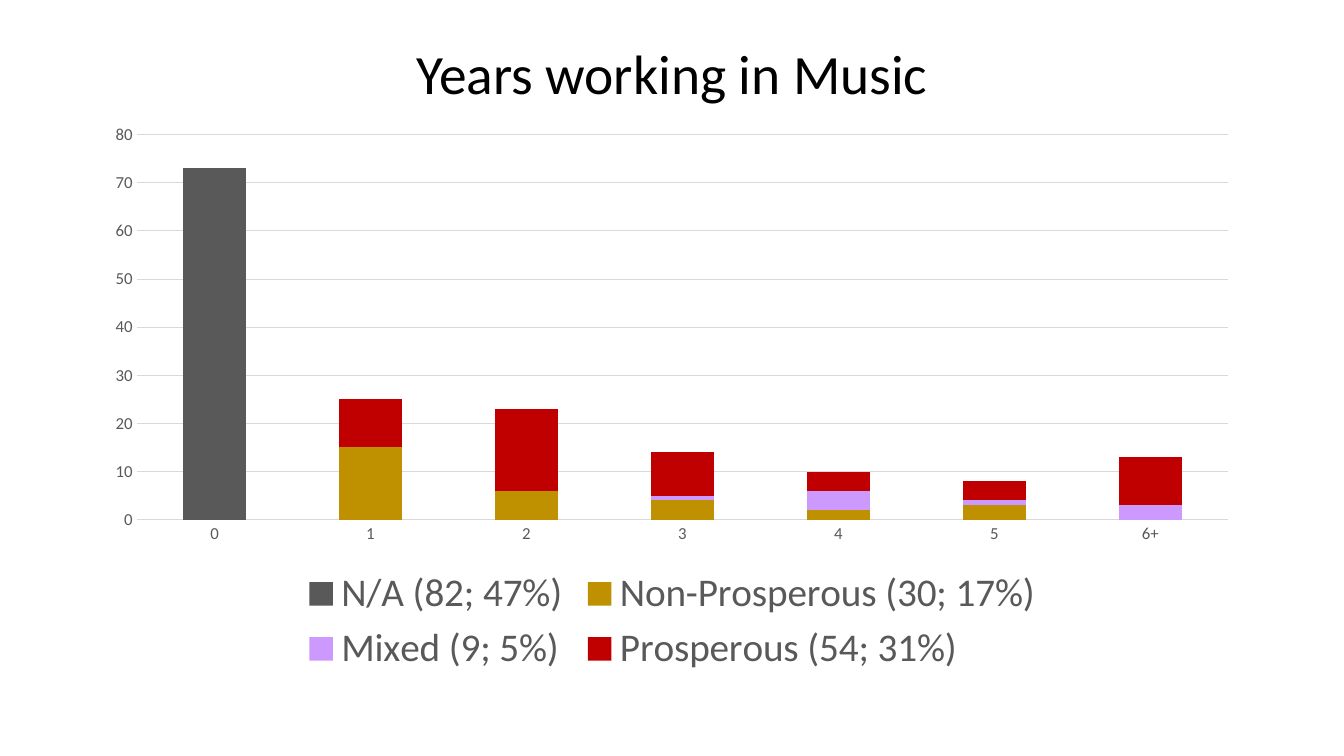
from pptx import Presentation
from pptx.chart.data import CategoryChartData
from pptx.dml.color import RGBColor
from pptx.enum.chart import XL_CHART_TYPE, XL_LEGEND_POSITION, XL_TICK_MARK
from pptx.enum.text import MSO_ANCHOR, MSO_AUTO_SIZE, PP_ALIGN
from pptx.util import Pt

PX = 9525
FONT = "Calibri"
BLACK = RGBColor(0x00, 0x00, 0x00)
GRAY = RGBColor(0x59, 0x59, 0x59)
RULE = RGBColor(0xD9, 0xD9, 0xD9)
GOLD = RGBColor(0xBF, 0x90, 0x00)
LILAC = RGBColor(0xCC, 0x99, 0xFF)
RED = RGBColor(0xC0, 0x00, 0x00)

STACKED = XL_CHART_TYPE.COLUMN_STACKED
BOTTOM = XL_LEGEND_POSITION.BOTTOM
NO_TICK = XL_TICK_MARK.NONE
MIDDLE = MSO_ANCHOR.MIDDLE
NO_FIT = MSO_AUTO_SIZE.NONE
CENTER = PP_ALIGN.CENTER

YEARS = ["0", "1", "2", "3", "4", "5", "6+"]
GROUPS = [
    ("N/A (82; 47%)", [73, 0, 0, 0, None, None, None], GRAY),
    ("Non-Prosperous (30; 17%)", [None, 15, 6, 4, 2, 3, None], GOLD),
    ("Mixed (9; 5%)", [0, None, None, 1, 4, 1, 3], LILAC),
    ("Prosperous (54; 31%)", [0, 10, 17, 9, 4, 4, 10], RED),
]


def set_font(font, size, color):
    font.name = FONT
    font.size = Pt(size)
    font.bold = False
    font.color.rgb = color


def set_line(line, color):
    line.color.rgb = color
    line.width = Pt(0.75)


def add_title(page, left, top, width, height):
    title = page.shapes.title
    title.left, title.top = left * PX, top * PX
    title.width, title.height = width * PX, height * PX
    frame = title.text_frame
    frame.text = "Years working in Music"
    frame.word_wrap = True
    frame.auto_size = NO_FIT
    frame.vertical_anchor = MIDDLE
    para = frame.paragraphs[0]
    para.alignment = CENTER
    para.line_spacing = 0.9
    set_font(para.font, 39.6, BLACK)


def style_axes(chart):
    for axis in (chart.category_axis, chart.value_axis):
        axis.major_tick_mark = axis.minor_tick_mark = NO_TICK
        set_font(axis.tick_labels.font, 12, GRAY)
    set_line(chart.category_axis.format.line, RULE)
    values = chart.value_axis
    values.minimum_scale, values.maximum_scale, values.major_unit = 0, 80, 10
    values.format.line.fill.background()
    values.has_major_gridlines = True
    set_line(values.major_gridlines.format.line, RULE)


def add_years_chart(page, left, top, width, height):
    data = CategoryChartData()
    data.categories = YEARS
    for name, counts, _ in GROUPS:
        data.add_series(name, counts)
    chart = page.shapes.add_chart(
        STACKED, left * PX, top * PX, width * PX, height * PX, data).chart
    set_font(chart.font, 10, BLACK)
    chart.has_title = False
    chart.has_legend = True
    chart.legend.position = BOTTOM
    chart.legend.include_in_layout = False
    set_font(chart.legend.font, 28, GRAY)
    style_axes(chart)

    plot = chart.plots[0]
    plot.gap_width, plot.overlap = 150, 100
    plot.vary_by_categories = False
    for series, (_, _, color) in zip(plot.series, GROUPS):
        series.format.fill.solid()
        series.format.fill.fore_color.rgb = color
        series.invert_if_negative = False


def main():
    deck = Presentation()
    deck.slide_width, deck.slide_height = 1280 * PX, 720 * PX
    page = deck.slides.add_slide(deck.slide_layouts.get_by_name("Title Only"))
    add_title(page, 88, 38, 1104, 70)
    add_years_chart(page, 88, 108, 1104, 540)
    deck.save("out.pptx")


if __name__ == "__main__":
    main()
